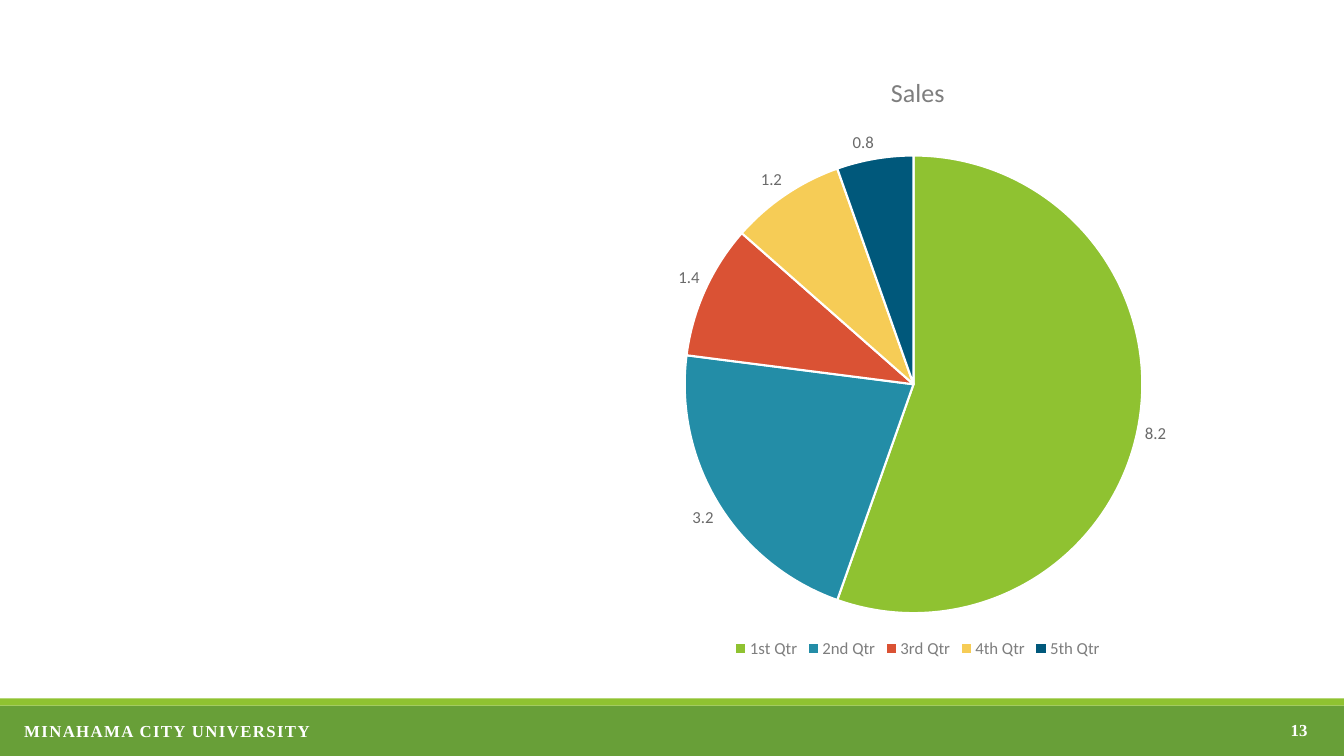
from dataclasses import dataclass

from pptx import Presentation
from pptx.chart.data import CategoryChartData
from pptx.dml.color import RGBColor
from pptx.enum.chart import XL_CHART_TYPE, XL_LABEL_POSITION, XL_LEGEND_POSITION
from pptx.enum.shapes import MSO_SHAPE
from pptx.enum.text import MSO_ANCHOR, PP_ALIGN
from pptx.util import Cm, Pt


@dataclass(frozen=True)
class Theme:
    band: str = "689F38"
    accent: str = "8FC231"
    white: str = "FFFFFF"
    heading: str = "7E7E7E"
    label: str = "6A6A6A"
    quarters: tuple = ("8FC231", "238DA7", "DA5234", "F6CC56", "00587B")
    footer_font: str = "Times New Roman"
    chart_font: str = "Calibri"
    body_size: float = 12
    title_size: float = 18.6


theme = Theme()


def style_font(font, size, color, name, bold=False):
    font.size = Pt(size)
    font.color.rgb = RGBColor.from_string(color)
    font.name = name
    font.bold = bold


def add_text(text, left, top, width, height, align=PP_ALIGN.LEFT,
             anchor=MSO_ANCHOR.TOP, spacing=0):
    frame = slide.shapes.add_textbox(Cm(left), Cm(top), Cm(width), Cm(height)).text_frame
    frame.word_wrap = True
    frame.vertical_anchor = anchor
    frame.paragraphs[0].alignment = align
    run = frame.paragraphs[0].add_run()
    run.text = text
    style_font(run.font, theme.body_size, theme.white, theme.footer_font, bold=True)
    if spacing:
        run._r.get_or_add_rPr().set("spc", str(spacing * 100))


deck = Presentation()
deck.slide_width, deck.slide_height = Cm(33.87), Cm(19.05)
slide = deck.slides.add_slide(deck.slide_layouts[6])

for top, height, color in ((17.78, 1.27, theme.band), (17.6, 0.18, theme.accent)):
    footer_band = slide.shapes.add_shape(
        MSO_SHAPE.RECTANGLE, 0, Cm(top), deck.slide_width, Cm(height))
    footer_band.shadow.inherit = False
    footer_band.fill.solid()
    footer_band.fill.fore_color.rgb = RGBColor.from_string(color)
    footer_band.line.fill.background()

add_text("MINAHAMA CITY UNIVERSITY", 0.36, 18.03, 31.7, 0.76, spacing=1)
add_text("13", 25.58, 17.88, 7.62, 1.02, align=PP_ALIGN.RIGHT, anchor=MSO_ANCHOR.MIDDLE)

sales_data = CategoryChartData()
sales_data.categories = ["1st Qtr", "2nd Qtr", "3rd Qtr", "4th Qtr", "5th Qtr"]
sales_data.add_series("Sales", (8.2, 3.2, 1.4, 1.2, 0.8))
sales = slide.shapes.add_chart(
    XL_CHART_TYPE.PIE, Cm(14.15), Cm(1.3), Cm(17.96), Cm(15.39), sales_data).chart

sales.has_title = True
heading = sales.chart_title.text_frame.paragraphs[0].add_run()
heading.text = "Sales"
style_font(heading.font, theme.title_size, theme.heading, theme.chart_font)
sales.chart_title.include_in_layout = False

sales.has_legend = True
sales.legend.position = XL_LEGEND_POSITION.BOTTOM
sales.legend.include_in_layout = False
style_font(sales.legend.font, theme.body_size, theme.heading, theme.chart_font)

pie = sales.plots[0]
pie.vary_by_categories = True
quarters = pie.series[0]
for index, color in enumerate(theme.quarters):
    slice_format = quarters.points[index].format
    slice_format.fill.solid()
    slice_format.fill.fore_color.rgb = RGBColor.from_string(color)
    slice_format.line.color.rgb = RGBColor.from_string(theme.white)
    slice_format.line.width = Pt(1.5)

values = quarters.data_labels
values.show_value = True
values.position = XL_LABEL_POSITION.OUTSIDE_END
style_font(values.font, theme.body_size, theme.label, theme.chart_font)

deck.save("out.pptx")
